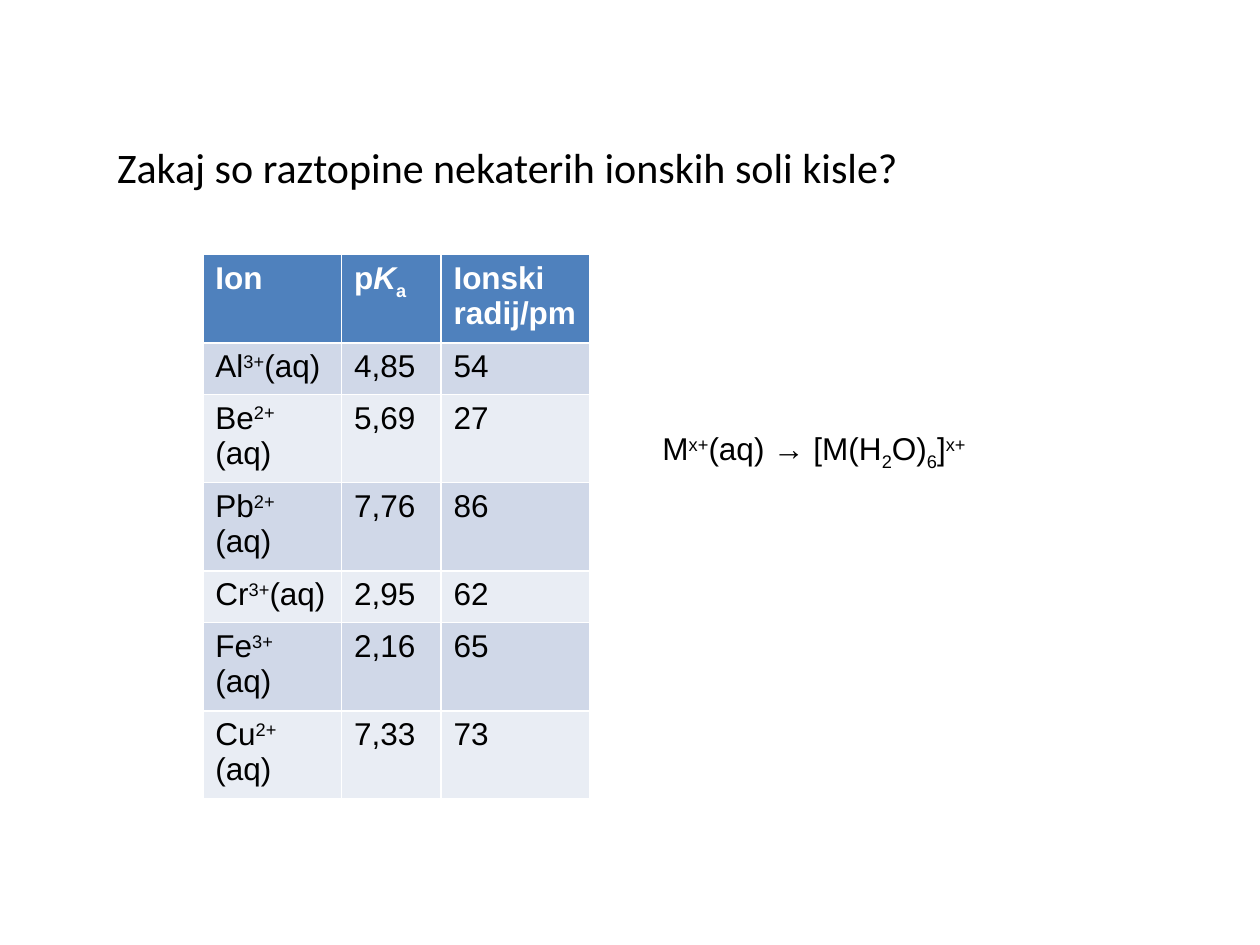
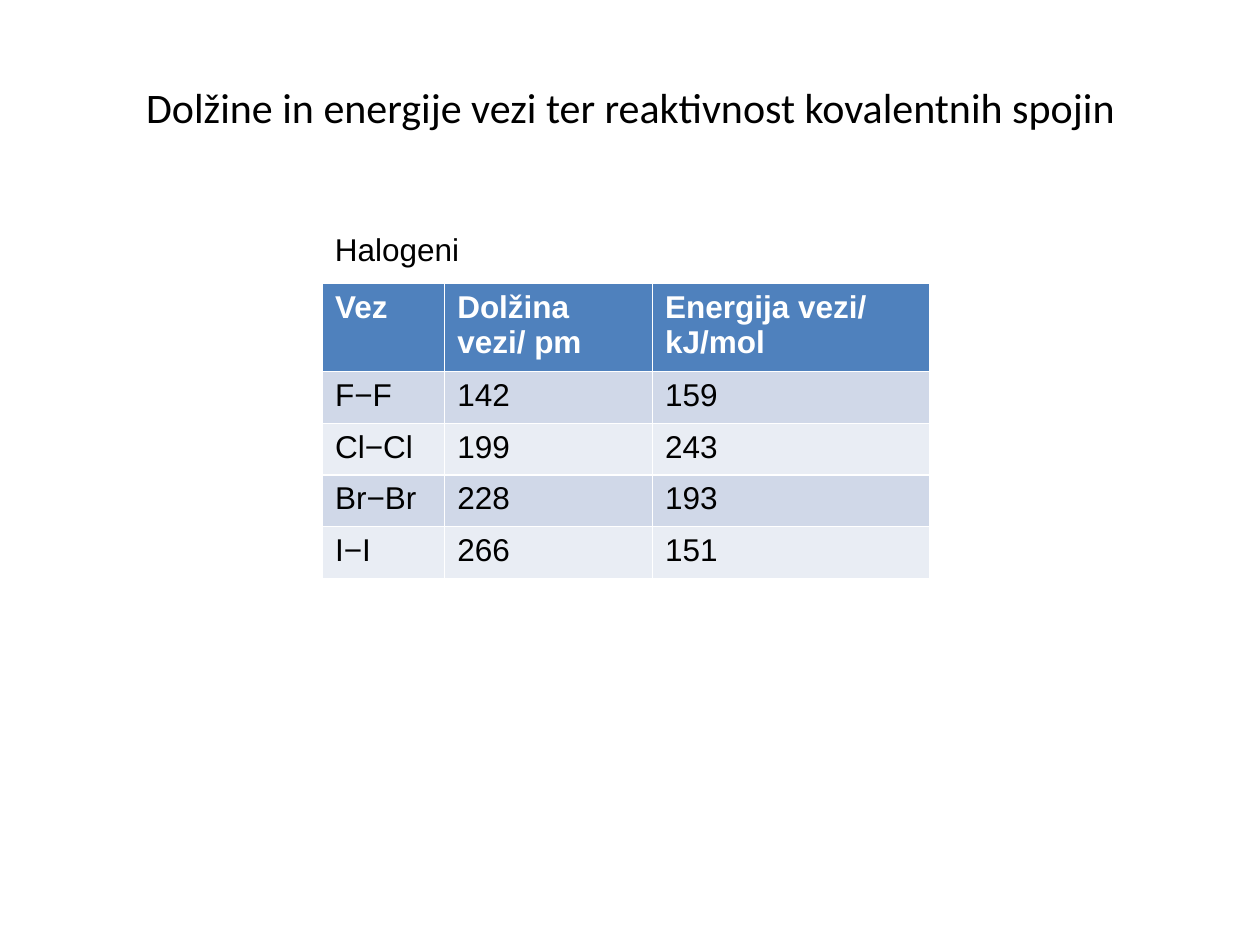
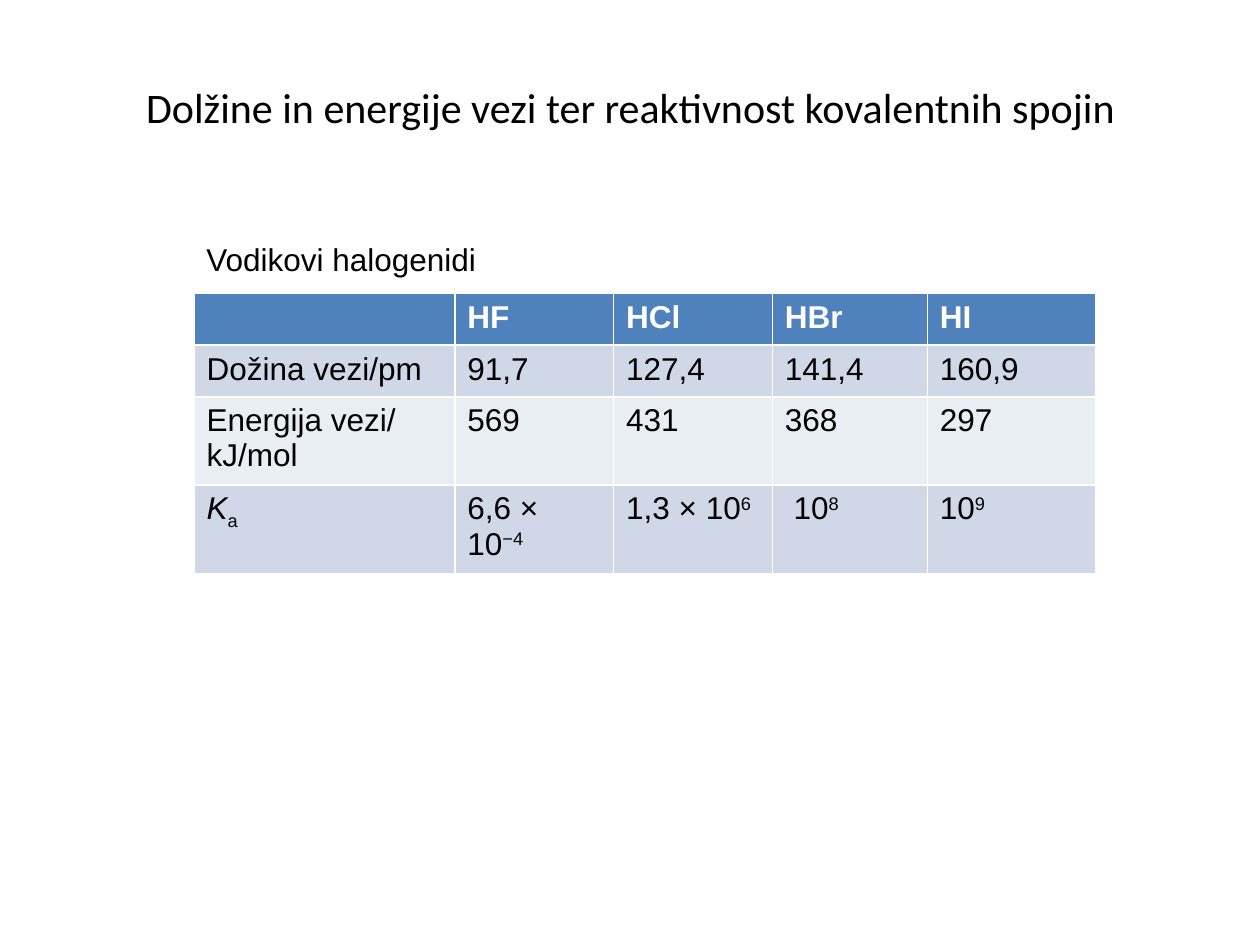
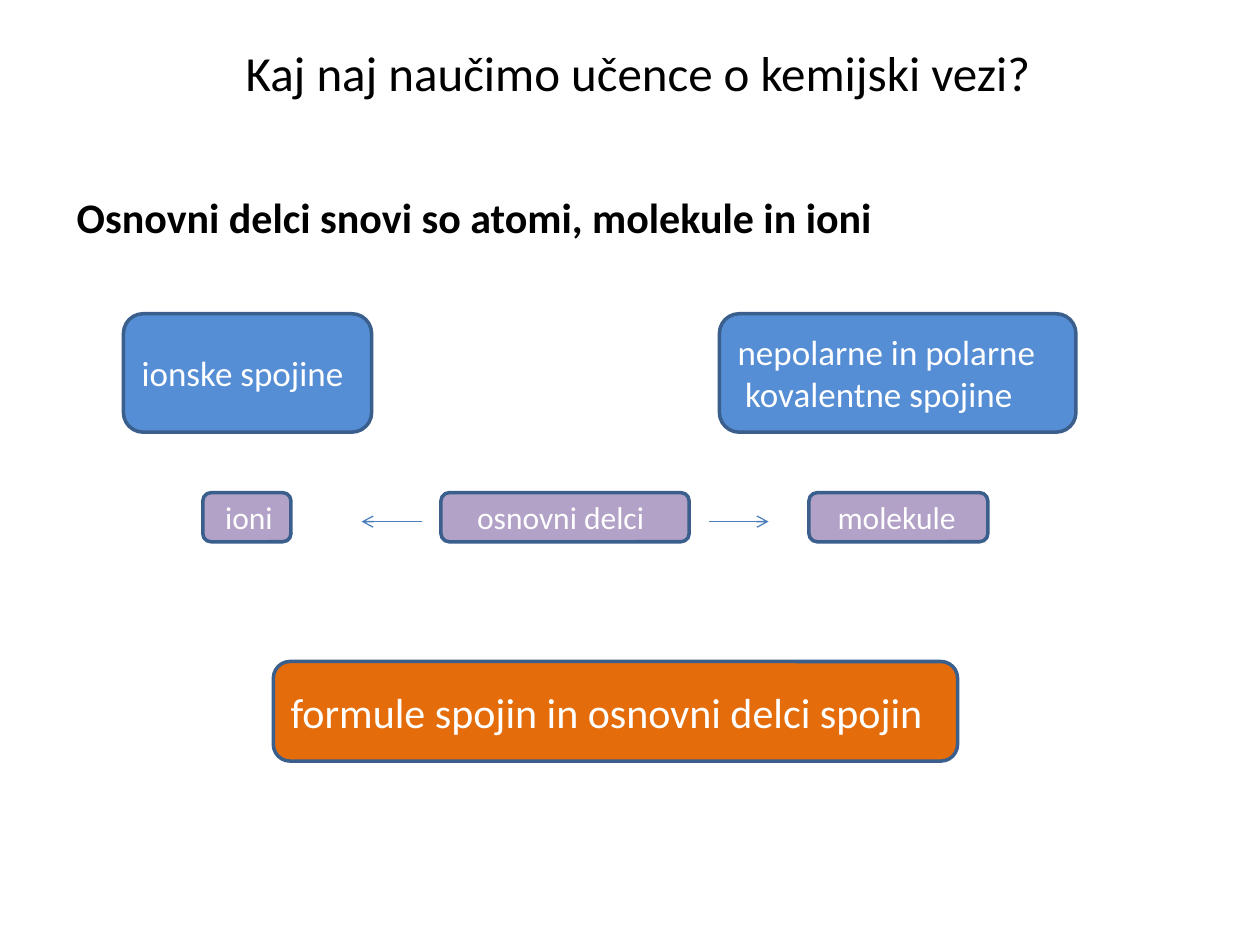
from pptx import Presentation
from pptx.dml.color import RGBColor
from pptx.enum.shapes import MSO_CONNECTOR, MSO_SHAPE
from pptx.enum.text import MSO_ANCHOR, MSO_AUTO_SIZE, PP_ALIGN
from pptx.oxml.ns import qn
from pptx.util import Inches, Pt
from lxml import etree

COLORS = {
    "text": "000000", "white": "FFFFFF", "header": "4F81BD",
    "band": "D0D8E8", "band_light": "E9EDF4",
    "blue": "558ED5", "purple": "B3A2C7", "orange": "E46C0A",
    "outline": "3A5F8C", "arrow": "4B7EBC",
}
COLORS = {name: RGBColor.from_string(value) for name, value in COLORS.items()}
BASELINES = {"^": "30000", "_": "-25000"}
ROW_HEIGHT = 0.41


def write(tf, text, size, font, color="text", bold=False):
    """Write lines; "|" splits runs, a leading ^ _ * raises, lowers or slants one."""
    for i, line in enumerate(text.split("\n")):
        p = tf.add_paragraph() if i else tf.paragraphs[0]
        p.alignment = PP_ALIGN.LEFT
        p.font.size, p.font.name, p.font.bold = Pt(size), font, bold
        p.font.color.rgb = COLORS[color]
        for part in filter(None, line.split("|")):
            r = p.add_run()
            r.text = part.lstrip("^_*")
            if part[0] in BASELINES:
                r._r.get_or_add_rPr().set("baseline", BASELINES[part[0]])
            elif part[0] == "*":
                r.font.italic = True


def add_table(s, left, top, height, widths, rows, head_height=ROW_HEIGHT):
    """Add a banded table with a bold header row."""
    frame = s.shapes.add_table(len(rows), len(widths), Inches(left), Inches(top),
                               Inches(sum(widths)), Inches(height))
    table = frame.table
    for column, width in zip(table.columns, widths):
        column.width = Inches(width)
    for i, row in enumerate(rows):
        table.rows[i].height = Inches(ROW_HEIGHT if i else head_height)
        fill = "header" if i == 0 else "band" if i % 2 else "band_light"
        for j, text in enumerate(row):
            cell = table.cell(i, j)
            cell.fill.solid()
            cell.fill.fore_color.rgb = COLORS[fill]
            write(cell.text_frame, text, 18, "Arial",
                  "text" if i else "white", bold=i == 0)
    frame.height = Inches(height)
    return table


prs = Presentation()
prs.slide_width, prs.slide_height = Inches(10), Inches(7.5)

# Titles: text, size, left, top, width, height
bonds_title = ("Dolžine in energije vezi ter reaktivnost kovalentnih spojin",
               24, 1.06, 0.6, 7.97, 0.5)
titles = [
    ("Zakaj so raztopine nekaterih ionskih soli kisle?", 24, 0.83, 1.07, 6.45, 0.5),
    bonds_title,
    bonds_title,
    ("Kaj naj naučimo učence o kemijski vezi?", 28, 1.85, 0.29, 6.5, 0.57),
]
for text, size, *box in titles:
    s = prs.slides.add_slide(prs.slide_layouts[5])
    sp = s.shapes.title
    sp.left, sp.top, sp.width, sp.height = map(Inches, box)
    tf = sp.text_frame
    tf.word_wrap = False
    tf.auto_size = MSO_AUTO_SIZE.SHAPE_TO_FIT_TEXT
    tf.vertical_anchor = MSO_ANCHOR.TOP
    write(tf, text, size, "Calibri")
ions, halogens, halides, summary = prs.slides

# Tables
add_table(ions, 1.61, 2.02, 3.13, [1.1, 0.79, 1.18], [
    ("Ion", "p|*K|_a", "Ionski radij/pm"),
    ("Al|^3+|(aq)", "4,85", "54"),
    ("Be|^2+|(aq)", "5,69", "27"),
    ("Pb|^2+|(aq)", "7,76", "86"),
    ("Cr|^3+|(aq)", "2,95", "62"),
    ("Fe|^3+|(aq)", "2,16", "65"),
    ("Cu|^2+|(aq)", "7,33", "73"),
])
add_table(halogens, 2.56, 2.25, 2.62, [0.97, 1.65, 2.2], [
    ("Vez", "Dolžina vezi/ pm", "Energija vezi/ kJ/mol"),
    ("F−F", "142", "159"),
    ("Cl−Cl", "199", "243"),
    ("Br−Br", "228", "193"),
    ("I−I", "266", "151"),
], head_height=0.15)
table = add_table(halides, 1.54, 2.33, 2.21, [2.07, 1.26, 1.26, 1.23, 1.34], [
    ("", "HF", "HCl", "HBr", "HI"),
    ("Dožina vezi/pm", "91,7", "127,4", "141,4", "160,9"),
    ("Energija vezi/ kJ/mol", "569", "431", "368", "297"),
    ("*K|_a", "6,6 × 10|^−4", "1,3 × 10|^6", "10|^8", "10|^9"),
])
table.cell(3, 3).margin_left = Inches(0.17)

# Captions and statements: slide, text, box, size, font, bold, wrap
labels = [
    (ions, "M|^x+|(aq) → [M(H|_2|O)|_6|]|^x+", (5.16, 3.36, 2.77, 0.4),
     18, "Arial", False, False),
    (halogens, "Halogeni", (2.56, 1.78, 1.2, 0.4), 18, "Arial", False, False),
    (halides, "Vodikovi halogenidi", (1.54, 1.86, 2.36, 0.4), 18, "Arial", False, False),
    (summary, "Osnovni delci snovi so atomi, molekule in ioni",
     (0.51, 1.47, 8.11, 0.5), 24, "Calibri", True, True),
]
for s, text, box, size, font, bold, wrap in labels:
    tf = s.shapes.add_textbox(*map(Inches, box)).text_frame
    tf.word_wrap = wrap
    tf.auto_size = MSO_AUTO_SIZE.SHAPE_TO_FIT_TEXT
    write(tf, text, size, font, bold=bold)

# Arrows from the basic particles to ions and molecules
for start, end in [(3.35, 2.87), (5.63, 6.1)]:
    line = summary.shapes.add_connector(MSO_CONNECTOR.STRAIGHT, Inches(start), Inches(4.14),
                                        Inches(end), Inches(4.14))
    line.line.color.rgb = COLORS["arrow"]
    line.line.width = Pt(0.75)
    etree.SubElement(line.line._get_or_add_ln(), qn("a:tailEnd"), type="arrow")
    etree.SubElement(line._element.spPr, qn("a:effectLst"))

# Concept boxes: text, fill, size, left, top, width, height, indents per line
boxes = [
    ("nepolarne in polarne\nkovalentne spojine", "blue", 20, 5.71, 2.49, 2.83, 0.94, (0, 0.06)),
    ("ionske spojine", "blue", 20, 0.98, 2.49, 1.97, 0.94, (0,)),
    ("osnovni delci", "purple", 18, 3.5, 3.91, 1.97, 0.39, (0.17,)),
    ("ioni", "purple", 18, 1.61, 3.91, 0.7, 0.39, (0.06,)),
    ("formule spojin in osnovni delci spojin", "orange", 24, 2.17, 5.25, 5.43, 0.79, (0,)),
    ("molekule", "purple", 18, 6.42, 3.91, 1.42, 0.39, (0.11,)),
]
for text, fill, size, left, top, width, height, indents in boxes:
    sp = summary.shapes.add_shape(MSO_SHAPE.ROUNDED_RECTANGLE, Inches(left), Inches(top),
                                  Inches(width), Inches(height))
    sp.shadow.inherit = False
    sp.fill.solid()
    sp.fill.fore_color.rgb = COLORS[fill]
    sp.line.color.rgb = COLORS["outline"]
    sp.line.width = Pt(2)
    tf = sp.text_frame
    tf.word_wrap = True
    tf.vertical_anchor = MSO_ANCHOR.MIDDLE
    write(tf, text, size, "Calibri", "white")
    for p, indent in zip(tf.paragraphs, indents):
        if indent:
            p._p.get_or_add_pPr().set("marL", str(Inches(indent)))

prs.save("out.pptx")
